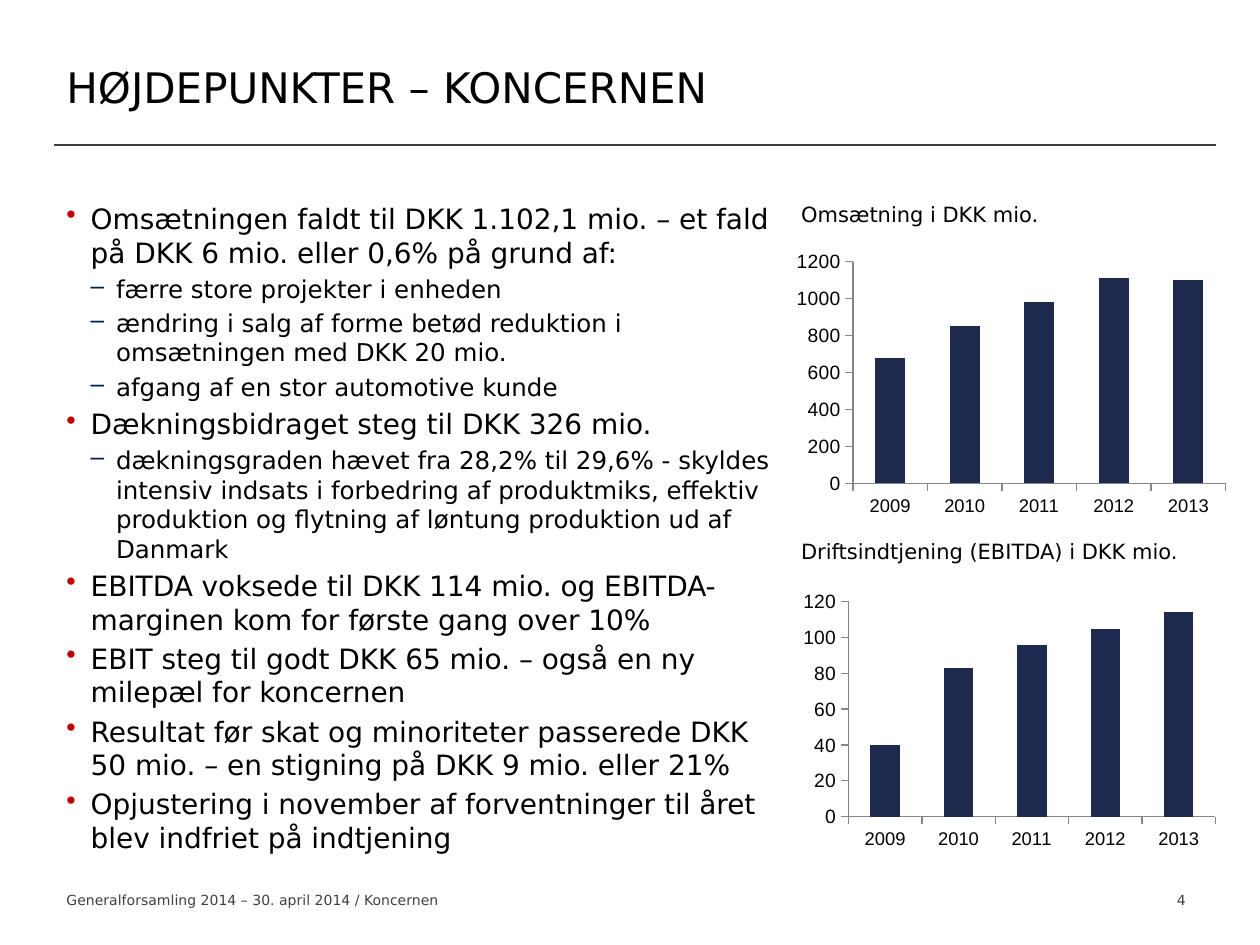
from dataclasses import dataclass

import pptx
import pptx.chart.data
import pptx.dml.color
import pptx.enum.chart
import pptx.enum.shapes
import pptx.enum.text
import pptx.oxml
import pptx.oxml.ns
import pptx.util
from lxml import etree

Cm, Pt = pptx.util.Cm, pptx.util.Pt
Align = pptx.enum.text.PP_ALIGN
Anchor = pptx.enum.text.MSO_ANCHOR
qn = pptx.oxml.ns.qn


@dataclass(frozen=True)
class Theme:
    font: str = "DejaVu Sans"
    chart_font: str = "Arial"
    ink: str = "000000"
    gray: str = "404040"
    axis: str = "868686"
    bar: str = "1D294D"
    dot: str = "C00000"
    dash: str = "06204D"
    title: float = 24
    main: float = 16
    sub: float = 14
    label: float = 12
    foot: float = 8
    value: float = 11
    year: float = 10.5


THEME = Theme()

POINTS = [
    (0, "Omsætningen faldt til DKK 1.102,1 mio. – et fald på DKK 6 mio. eller 0,6% på grund af:"),
    (1, "færre store projekter i enheden"),
    (1, "ændring i salg af forme betød reduktion i omsætningen med DKK 20 mio."),
    (1, "afgang af en stor automotive kunde"),
    (0, "Dækningsbidraget steg til DKK 326 mio."),
    (1, "dækningsgraden hævet fra 28,2% til 29,6% - skyldes intensiv indsats i forbedring "
        "af produktmiks, effektiv produktion og flytning af løntung produktion ud af Danmark"),
    (0, "EBITDA voksede til DKK 114 mio. og EBITDA-marginen kom for første gang over 10%"),
    (0, "EBIT steg til godt DKK 65 mio. – også en ny milepæl for koncernen"),
    (0, "Resultat før skat og minoriteter passerede DKK 50 mio. – en stigning på DKK 9 mio. eller 21%"),
    (0, "Opjustering i november af forventninger til året blev indfriet på indtjening"),
]

YEARS = ["2009", "2010", "2011", "2012", "2013"]
# Caption, values, axis top, axis step, plot area as shares of the chart
PANELS = [
    ("Omsætning i DKK mio.", [680, 850, 980, 1110, 1100], 1200, 200,
     (0.144, 0.06, 0.836, 0.8)),
    ("Driftsindtjening (EBITDA) i DKK mio.", [40, 83, 96, 105, 114], 120, 20,
     (0.134, 0.07, 0.823, 0.775)),
]


def rgb(color):
    return pptx.dml.color.RGBColor.from_string(color)


def style(font, size, color=THEME.ink, name=THEME.font):
    font.size, font.name = Pt(size), name
    font.color.rgb = rgb(color)


def add_frame(slide, box):
    frame = slide.shapes.add_textbox(*map(Cm, box)).text_frame
    frame.word_wrap = True
    return frame


def add_run(para, text, size, color=THEME.ink):
    run = para.add_run()
    run.text = text
    style(run.font, size, color)


def add_text(slide, box, text, size, color=THEME.ink, align=Align.LEFT, anchor=Anchor.TOP):
    frame = add_frame(slide, box)
    frame.vertical_anchor = anchor
    para = frame.paragraphs[0]
    para.alignment = align
    add_run(para, text, size, color)


def add_bullet(para, mark, color, left, hang):
    props = para._p.get_or_add_pPr()
    props.set("marL", str(Cm(left)))
    props.set("indent", str(-Cm(hang)))
    tint = etree.SubElement(props, qn("a:buClr"))
    etree.SubElement(tint, qn("a:srgbClr"), val=color)
    etree.SubElement(props, qn("a:buChar"), char=mark)


def add_head(slide, box):
    """Title above a rule that runs along the bottom of the box."""
    left, top, width, height = box
    add_text(slide, (left, top, 21.79, height), "HØJDEPUNKTER – KONCERNEN",
             THEME.title, anchor=Anchor.MIDDLE)
    base = Cm(top + height)
    rule = slide.shapes.add_connector(pptx.enum.shapes.MSO_CONNECTOR.STRAIGHT,
                                      Cm(left), base, Cm(left + width), base)
    rule.line.color.rgb = rgb(THEME.gray)
    rule.line.width = Pt(1.25)
    etree.SubElement(rule._element.spPr, qn("a:effectLst"))


def add_points(slide, box):
    levels = [(THEME.main, "•", THEME.dot, 0.49, 0.49),
              (THEME.sub, "–", THEME.dash, 1, 0.51)]
    frame = add_frame(slide, box)
    for i, (level, text) in enumerate(POINTS):
        para = frame.add_paragraph() if i else frame.paragraphs[0]
        size, *mark = levels[level]
        add_bullet(para, *mark)
        para.level = level
        para.space_before = Pt(0.2 * size if i else 0)
        add_run(para, text, size)


def set_plot(chart, area):
    """Fix the inner plot area at the given shares of the chart."""
    plot = chart._chartSpace.chart.plotArea
    for old in plot.findall(qn("c:layout")):
        plot.remove(old)
    layout = etree.Element(qn("c:layout"))
    manual = etree.SubElement(layout, qn("c:manualLayout"))
    pairs = [("layoutTarget", "inner"), ("xMode", "edge"), ("yMode", "edge"),
             *zip("xywh", map(str, area))]
    for tag, val in pairs:
        etree.SubElement(manual, qn("c:" + tag), val=val)
    plot.insert(0, layout)


def add_panel(slide, box, label, values, peak, step, area):
    """Caption with a column chart below it."""
    left, top, width, height = box
    add_text(slide, (left, top, width + 0.5, 0.79), label, THEME.label)
    data = pptx.chart.data.CategoryChartData()
    data.categories = YEARS
    data.add_series("Series 1", values)
    drop = 1
    kind = pptx.enum.chart.XL_CHART_TYPE.COLUMN_CLUSTERED
    chart = slide.shapes.add_chart(kind, Cm(left), Cm(top + drop), Cm(width),
                                   Cm(height - drop), data).chart
    chart.has_legend = chart.has_title = False
    style(chart.font, THEME.value, name=THEME.chart_font)
    bars = chart.plots[0]
    bars.gap_width = 150
    bars.vary_by_categories = False
    fill = bars.series[0].format.fill
    fill.solid()
    fill.fore_color.rgb = rgb(THEME.bar)
    for axis, size in ((chart.category_axis, THEME.year), (chart.value_axis, THEME.value)):
        axis.has_major_gridlines = False
        axis.major_tick_mark = pptx.enum.chart.XL_TICK_MARK.OUTSIDE
        axis.format.line.color.rgb = rgb(THEME.axis)
        axis.format.line.width = Pt(0.75)
        style(axis.tick_labels.font, size, name=THEME.chart_font)
    scale = chart.value_axis
    scale.minimum_scale, scale.maximum_scale, scale.major_unit = 0, peak, step
    set_plot(chart, area)


def add_foot(slide, box):
    left, top, width, height = box
    add_text(slide, (left, top, 10.21, height),
             "Generalforsamling 2014 – 30. april 2014 / Koncernen", THEME.foot, THEME.gray)
    page = 2.11
    add_text(slide, (left + width - page, top, page, height), "4",
             THEME.foot, THEME.gray, Align.CENTER)


def main():
    deck = pptx.Presentation()
    deck.slide_width, deck.slide_height = Cm(25.4), Cm(19.05)
    slide = deck.slides.add_slide(deck.slide_layouts[6])
    left, top = 1.09, 3.94
    add_head(slide, (left, 0.56, 23.42, 2.36))
    add_points(slide, (left, top, 15.01, 13.79))
    for i, panel in enumerate(PANELS):
        add_panel(slide, (15.9, top + 6.8 * i, 8.99, 6.59), *panel)
    add_foot(slide, (left, 17.85, 23.78, 0.6))
    deck.save("out.pptx")


if __name__ == "__main__":
    main()
